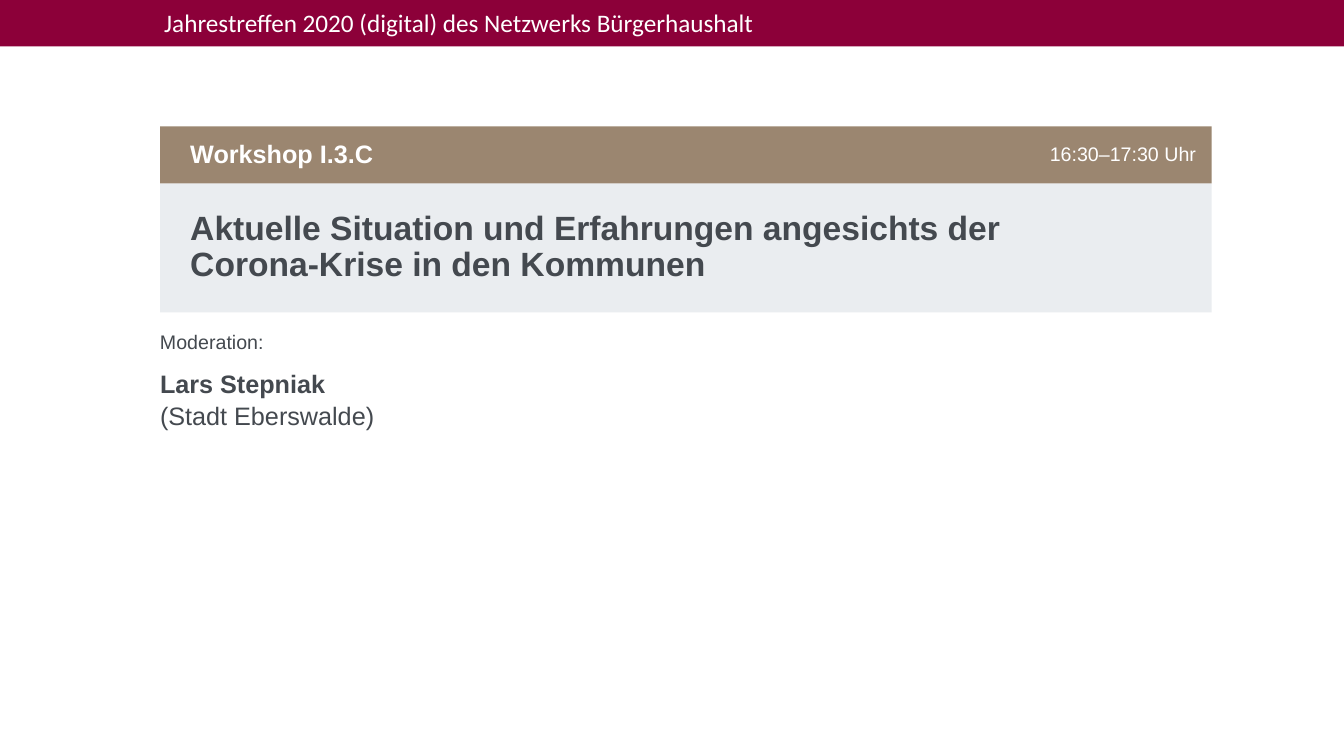
from copy import deepcopy

from pptx import Presentation
from pptx.dml.color import RGBColor
from pptx.enum import shapes, text
from pptx.oxml.ns import qn
from pptx.util import Pt

WINE = RGBColor(0x8C, 0x00, 0x39)
TAUPE = RGBColor(0x9B, 0x86, 0x70)
PALE = RGBColor(0xEA, 0xED, 0xF0)
SLATE = RGBColor(0x44, 0x49, 0x4F)
WHITE = RGBColor(0xFF, 0xFF, 0xFF)

EVENT = "Jahrestreffen 2020 (digital) des Netzwerks Bürgerhaushalt"
WORKSHOP = "Workshop I.3.C"
TIME = "16:30–17:30 Uhr"
TITLE = "Aktuelle Situation und Erfahrungen angesichts der \vCorona-Krise in den Kommunen"
ROLE = "Moderation:"
MODERATOR = "Lars Stepniak \v(Stadt Eberswalde)"

WIDTH, HEIGHT = 960, 540
HEADER_H = 33.1
LEFT, PANEL_W = 114.3, 751.2
BAND_TOP, BAND_H, TITLE_H = 90.2, 40.8, 92.2
TITLE_TOP = BAND_TOP + BAND_H
INDENT = 21.6
TIME_W = 385


def place(sp, left, top, width, height):
    sp.left, sp.top, sp.width, sp.height = map(Pt, (left, top, width, height))


def add_rect(s, left, top, width, height, fill):
    sp = s.shapes.add_shape(shapes.MSO_SHAPE.RECTANGLE,
                            *map(Pt, (left, top, width, height)))
    sp.shadow.inherit = False
    sp.fill.solid()
    sp.fill.fore_color.rgb = fill
    sp.line.fill.background()
    return sp


def add_box(s, *box):
    return s.shapes.add_textbox(*map(Pt, box))


def write(sp, content, size, color, bold=(False,), font="Arial", inset=(0, 7.2),
          middle=True, right=False, spacing=0.9, wrap=True):
    """Fill a one-paragraph shape; bold holds one flag per line."""
    tf = sp.text_frame
    tf.word_wrap = wrap
    tf.auto_size = text.MSO_AUTO_SIZE.NONE
    tf.vertical_anchor = text.MSO_ANCHOR.MIDDLE if middle else text.MSO_ANCHOR.TOP
    tf.margin_left, tf.margin_right = map(Pt, inset)
    tf.margin_top = tf.margin_bottom = Pt(3.6)
    tf.text = content
    p = tf.paragraphs[0]
    p.alignment = text.PP_ALIGN.RIGHT if right else text.PP_ALIGN.LEFT
    p.line_spacing = spacing
    p.space_before = Pt(0)
    for r, flag in zip(p.runs, bold):
        r.font.name, r.font.size, r.font.bold = font, Pt(size), flag
        r.font.color.rgb = color
    # A line break keeps the size of the text before it
    for br in p._p.findall(qn("a:br")):
        br.append(deepcopy(p.runs[0]._r.rPr))
    return p


def main():
    prs = Presentation()
    prs.slide_width, prs.slide_height = Pt(WIDTH), Pt(HEIGHT)
    s = prs.slides.add_slide(prs.slide_layouts[1])
    title, body = s.placeholders

    add_rect(s, 0, 0, WIDTH, HEADER_H, WINE)
    write(add_box(s, 110.2, 1.4, 440.6, 29), EVENT, 18, WHITE, font="Calibri",
          inset=(7.2, 7.2), spacing=1, wrap=False)

    band = add_rect(s, LEFT, BAND_TOP, PANEL_W, BAND_H, TAUPE)
    write(band, WORKSHOP, 18, WHITE, (True,), inset=(INDENT, 7.2))
    time = add_box(s, LEFT + PANEL_W - TIME_W, BAND_TOP, TIME_W, BAND_H)
    write(time, TIME, 14, WHITE, inset=(7.2, 11), right=True)

    place(title, LEFT, TITLE_TOP, PANEL_W, TITLE_H)
    title.fill.solid()
    title.fill.fore_color.rgb = PALE
    write(title, TITLE, 24, SLATE, (True, True), inset=(INDENT, 7.2))

    write(add_box(s, LEFT, 234, 352, 14.4), ROLE, 14, SLATE, middle=False)

    place(body, LEFT, 257.8, 280.8, 74.9)
    p = write(body, MODERATOR, 18, SLATE, (True, False), middle=False, spacing=1.07)
    pPr = p._p.get_or_add_pPr()
    pPr.set("marL", "0")
    pPr.set("indent", "0")
    pPr.append(pPr.makeelement(qn("a:buNone"), {}))

    prs.save("out.pptx")


if __name__ == "__main__":
    main()
